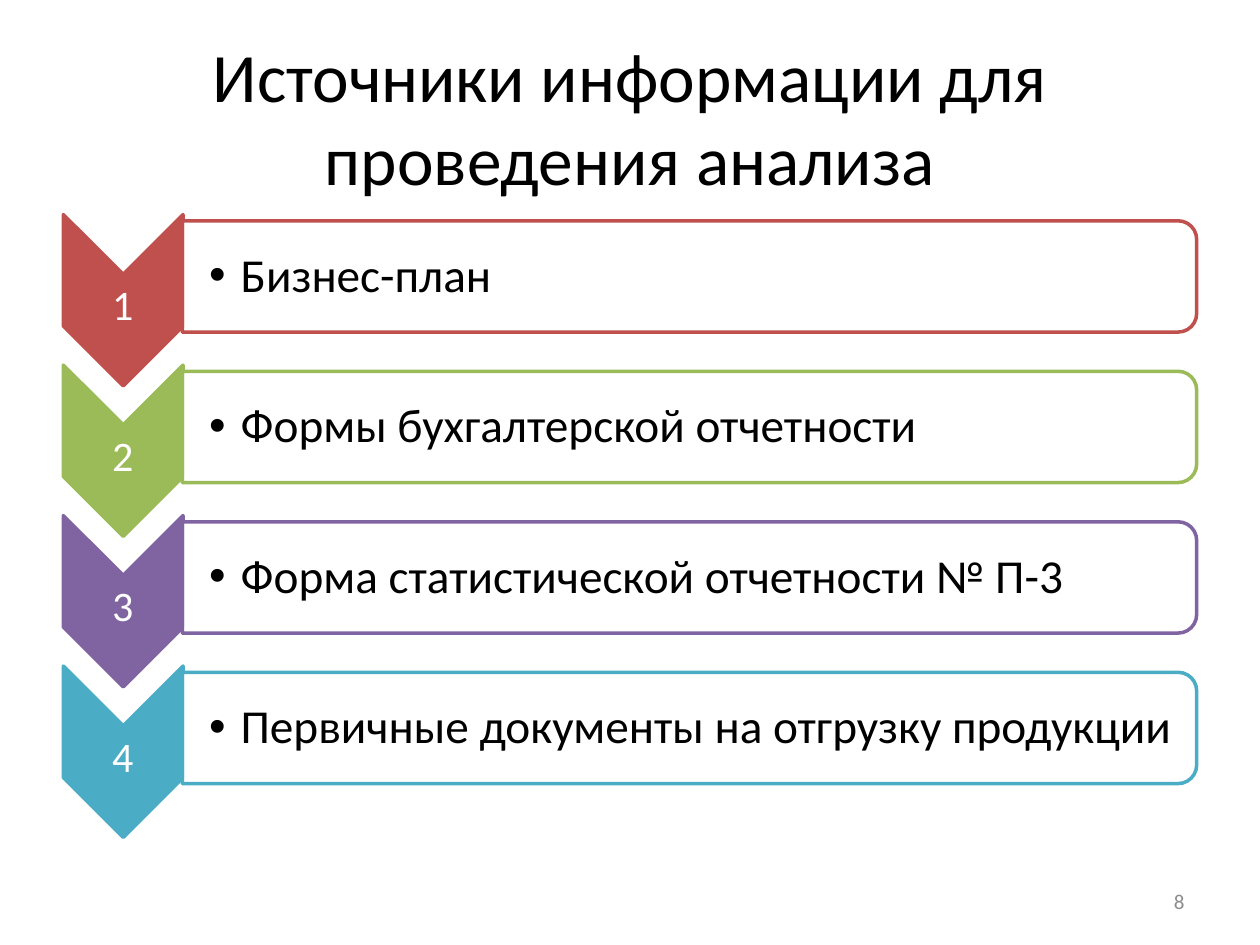
"""Build a slide listing the information sources for analysis."""
import pptx
import pptx.util
import pptx.dml.color
import pptx.enum.shapes
import pptx.enum.text
import pptx.oxml.ns
import lxml.etree

Pt = pptx.util.Pt
KIND = pptx.enum.shapes.MSO_SHAPE
ALIGN = pptx.enum.text.PP_ALIGN
TITLE = "Источники информации для проведения анализа"
PAGE = "8"
ITEMS = [
    ("Бизнес-план", "C0504D"),
    ("Формы бухгалтерской отчетности", "9BBB59"),
    ("Форма статистической отчетности № П-3", "8064A2"),
    ("Первичные документы на отгрузку продукции", "4BACC6"),
]
TOP, STEP = 129.6, 86


def color(code):
    """Turn a hex string into a colour."""
    return pptx.dml.color.RGBColor.from_string(code)


def sub(node, tag, **attrs):
    """Add a drawing element to a node."""
    return lxml.etree.SubElement(node, pptx.oxml.ns.qn(tag), attrs)


def write(slide, text, box, size, ink="000000", align=ALIGN.LEFT,
          pad=(7.2, 3.6, 7.2, 3.6), space=None, bullet=False):
    """Add a text box with one formatted paragraph."""
    frame = slide.shapes.add_textbox(*map(Pt, box)).text_frame
    frame.word_wrap = True
    frame.vertical_anchor = pptx.enum.text.MSO_ANCHOR.MIDDLE
    (frame.margin_left, frame.margin_top,
     frame.margin_right, frame.margin_bottom) = map(Pt, pad)
    para = frame.paragraphs[0]
    para.alignment = align
    para.line_spacing = space
    run = para.add_run()
    run.text = text
    run.font.name = "Calibri"
    run.font.size = Pt(size)
    run.font.color.rgb = color(ink)
    if bullet:
        props = para._p.get_or_add_pPr()
        props.set("marL", str(Pt(18)))
        props.set("indent", str(Pt(-18)))
        sub(props, "a:buFont", typeface="Arial")
        sub(props, "a:buChar", char="•")


def draw(slide, kind, mid, size, fill, edge):
    """Add a shape turned a quarter about its middle point."""
    (x, y), (wide, high) = mid, size
    box = x - wide / 2, y - high / 2, wide, high
    shape = slide.shapes.add_shape(kind, *map(Pt, box))
    shape.rotation = 90
    shape.shadow.inherit = False
    shape.fill.solid()
    shape.fill.fore_color.rgb = color(fill)
    shape.line.color.rgb = color(edge)
    shape.line.width = Pt(2)
    return shape


def main():
    """Lay out the slide and save it."""
    deck = pptx.Presentation()
    deck.slide_width, deck.slide_height = Pt(720), Pt(540)
    slide = deck.slides.add_slide(deck.slide_layouts[6])
    write(slide, TITLE, (36, 21.6, 648, 90), 39.6, align=ALIGN.CENTER)
    for num, (text, hue) in enumerate(ITEMS):
        top = TOP + num * STEP
        draw(slide, KIND.CHEVRON, (70.4, top + 42), (97.9, 68.4), hue, hue)
        write(slide, str(num + 1), (36, top + 31, 68.4, 29.5), 24, "FFFFFF",
              ALIGN.CENTER, pad=(1.5,) * 4, space=0.9)
        bar = draw(slide, KIND.ROUND_2_SAME_RECTANGLE, (394, top + 28.4),
                   (63.6, 579.6), "FFFFFF", hue)
        tint = bar.fill._xPr.find(".//" + pptx.oxml.ns.qn("a:srgbClr"))
        sub(tint, "a:alpha", val="90000")
        write(slide, text, (104.4, top, 576.7, 57.6), 27,
              pad=(15.1, 1.5, 1.5, 1.5), space=0.9, bullet=True)
    write(slide, PAGE, (516, 500.5, 168, 28.8), 12, "8C8C8C", ALIGN.RIGHT)
    deck.save("out.pptx")


if __name__ == "__main__":
    main()
